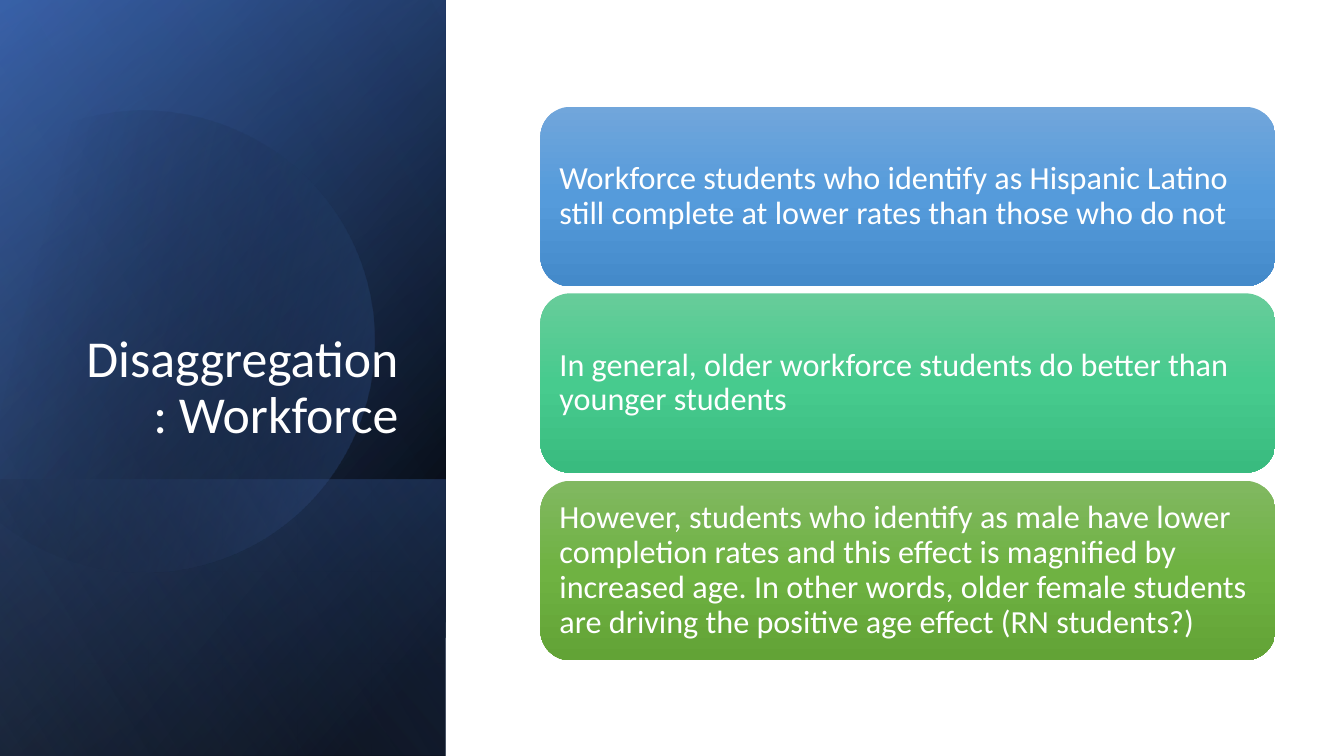
"""Build the workforce disaggregation slide."""
from dataclasses import dataclass
from itertools import pairwise
from math import cos, radians, sin, tan

from lxml.etree import SubElement
from pptx import Presentation
from pptx.dml.color import RGBColor
from pptx.enum.shapes import MSO_SHAPE as Kind
from pptx.enum.text import MSO_ANCHOR as Anchor, PP_ALIGN as Align
from pptx.oxml.ns import qn
from pptx.shapes.autoshape import Shape
from pptx.shapes.shapetree import SlideShapes as Shapes
from pptx.util import Pt

PX = 9144


@dataclass(frozen=True)
class Theme:
    black: str = "000000"
    navy: str = "2F5597"
    blue: str = "4472C4"
    pale: str = "8FAADC"
    white: str = "FFFFFF"
    sky: tuple[str, ...] = ("71A6DB", "559BDB", "448ACA")
    mint: tuple[str, ...] = ("67CC9A", "47CB8E", "39BB7F")
    leaf: tuple[str, ...] = ("81B861", "6FB242", "62A336")
    font: str = "Calibri"
    title: int = 37
    body: int = 23


@dataclass(frozen=True)
class Stop:
    pos: int
    color: str
    alpha: int = 100


@dataclass(frozen=True)
class Box:
    left: int
    top: int
    width: int
    height: int

    def emu(self) -> tuple[int, ...]:
        return tuple(PX * n for n in (self.left, self.top, self.width, self.height))


@dataclass(frozen=True)
class Panel:
    box: Box
    angle: int
    stops: tuple[Stop, ...]


@dataclass(frozen=True)
class Card:
    colors: tuple[str, ...]
    text: str


THEME = Theme()
SIDE = Box(-154, 154, 750, 442)
BASE = Panel(SIDE, 50, (Stop(8, THEME.black), Stop(100, THEME.navy)))
GLOW = Panel(SIDE, 30, (Stop(0, THEME.black, 0), Stop(99, THEME.blue, 46)))
FOOT = Panel(Box(84, 392, 274, 442), 130,
             (Stop(2, THEME.blue, 29), Stop(100, THEME.black, 30)))
SHEEN = Panel(SIDE, 120, (Stop(0, THEME.black, 0), Stop(99, THEME.pale, 11)))
DISC = (Stop(29, THEME.black, 0), Stop(100, THEME.blue, 43))
MID_X, MID_Y, RADIUS = 142, 334, 229
TURNS = (-117, -90, 0, 90, 149)
CARDS = (
    Card(THEME.sky, "Workforce students who identify as Hispanic Latino "
                    "still complete at lower rates than those who do not"),
    Card(THEME.mint, "In general, older workforce students do better than "
                     "younger students"),
    Card(THEME.leaf, "However, students who identify as male have lower "
                     "completion rates and this effect is magnified by "
                     "increased age. In other words, older female students "
                     "are driving the positive age effect (RN students?)"),
)
FIRST = Box(536, 106, 729, 178)
LAST, INSET = 477, 9


def shade(shape: Shape, stops: tuple[Stop, ...], angle: int) -> None:
    shape.shadow.inherit = False
    shape.line.fill.background()
    shape.fill.gradient()
    grad = shape.element.spPr.find(qn("a:gradFill"))
    grad.clear()
    grad.set("rotWithShape", "1")
    ramp = SubElement(grad, qn("a:gsLst"))
    for stop in stops:
        mark = SubElement(ramp, qn("a:gs"), pos=str(stop.pos * 1000))
        color = SubElement(mark, qn("a:srgbClr"), val=stop.color)
        if stop.alpha < 100:
            SubElement(color, qn("a:alpha"), val=str(stop.alpha * 1000))
    SubElement(grad, qn("a:lin"), ang=str(angle * 60000), scaled="0")


def add_panel(shapes: Shapes, panel: Panel) -> None:
    shape = shapes.add_shape(Kind.RECTANGLE, *panel.box.emu())
    shape.rotation = 90
    shape.element.spPr.find(qn("a:xfrm")).set("flipH", "1")
    shade(shape, panel.stops, panel.angle)


def on_arc(turn: int, pull: float = 0) -> tuple[int, int]:
    t = radians(turn)
    return (round(MID_X + RADIUS * (cos(t) - pull * sin(t))),
            round(MID_Y + RADIUS * (sin(t) + pull * cos(t))))


def add_disc(shapes: Shapes) -> None:
    dots = [on_arc(t) for t in TURNS]
    pen = shapes.build_freeform(*dots[0], scale=PX)
    pen.add_line_segments(dots[1:], close=True)
    shape = pen.convert_to_shape()
    left, top = min(x for x, _ in dots), min(y for _, y in dots)
    lines = list(shape.element.iter(qn("a:lnTo")))
    for line, (start, end) in zip(lines, pairwise(TURNS)):
        pull = 4 / 3 * tan(radians(end - start) / 4)
        line.clear()
        line.tag = qn("a:cubicBezTo")
        for x, y in (on_arc(start, pull), on_arc(end, -pull), on_arc(end)):
            SubElement(line, qn("a:pt"), x=str(x - left), y=str(y - top))
    shape.rotation = 343.9
    shade(shape, DISC, 30)


def add_text(shapes: Shapes, box: Box, text: str, *, size: int,
             align: Align = Align.LEFT, anchor: Anchor = Anchor.MIDDLE) -> None:
    frame = shapes.add_textbox(*box.emu()).text_frame
    frame.word_wrap = True
    frame.vertical_anchor = anchor
    frame.margin_left = frame.margin_right = 10 * PX
    frame.margin_top = frame.margin_bottom = 5 * PX
    para = frame.paragraphs[0]
    para.alignment = align
    para.line_spacing = 0.9
    run = para.add_run()
    run.text = text
    run.font.name = THEME.font
    run.font.size = Pt(size)
    run.font.color.rgb = RGBColor.from_string(THEME.white)


def add_card(shapes: Shapes, card: Card, row: int) -> None:
    drop = row * (LAST - FIRST.top) // (len(CARDS) - 1)
    box = Box(FIRST.left, FIRST.top + drop, FIRST.width, FIRST.height)
    shape = shapes.add_shape(Kind.ROUNDED_RECTANGLE, *box.emu())
    shade(shape, tuple(Stop(50 * n, c) for n, c in enumerate(card.colors)), 90)
    inner = Box(box.left + INSET, box.top + INSET,
                box.width - 2 * INSET, box.height - 2 * INSET)
    add_text(shapes, inner, card.text, size=THEME.body)


def main() -> None:
    deck = Presentation()
    deck.slide_width, deck.slide_height = 1333 * PX, 750 * PX
    shapes = deck.slides.add_slide(deck.slide_layouts[6]).shapes
    for panel in (BASE, GLOW, FOOT):
        add_panel(shapes, panel)
    add_disc(shapes)
    add_panel(shapes, SHEEN)
    add_text(shapes, Box(64, 184, 341, 262), "Disaggregation: Workforce",
             size=THEME.title, align=Align.RIGHT, anchor=Anchor.BOTTOM)
    for row, card in enumerate(CARDS):
        add_card(shapes, card, row)
    deck.save("out.pptx")


if __name__ == "__main__":
    main()
